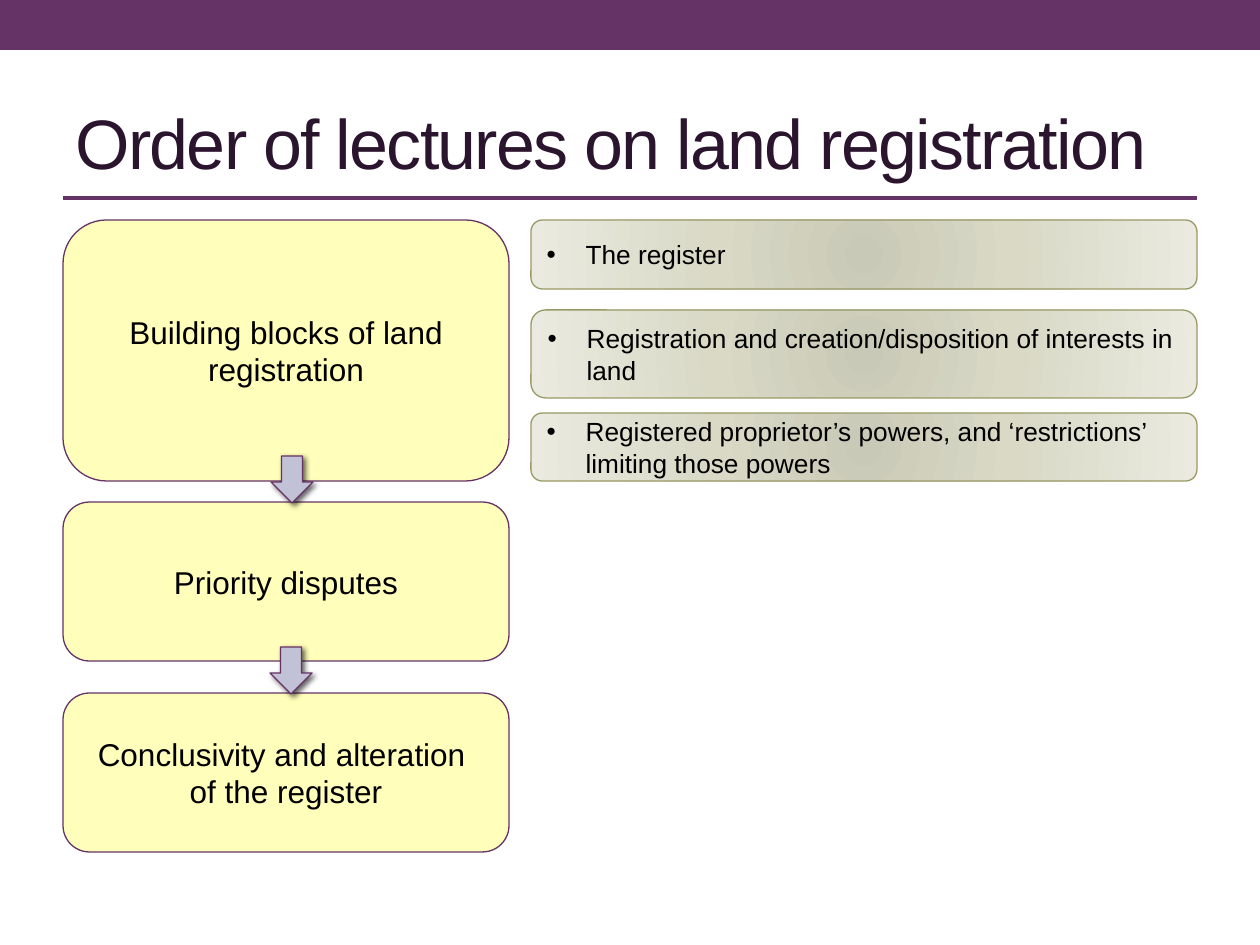
from dataclasses import dataclass

from lxml import etree
from pptx import Presentation
from pptx.dml.color import RGBColor
from pptx.enum.shapes import MSO_CONNECTOR, MSO_SHAPE as Shape
from pptx.enum.text import MSO_ANCHOR as Anchor, PP_ALIGN as Align
from pptx.oxml import parse_xml
from pptx.oxml.ns import nsdecls, qn
from pptx.util import Emu, Inches, Pt

PURPLE = RGBColor(0x66, 0x33, 0x66)
TITLE_COLOR = RGBColor(0x2B, 0x14, 0x2D)
CREAM = RGBColor(0xFF, 0xFE, 0xBA)
LAVENDER = RGBColor(0xC2, 0xC2, 0xD6)
OLIVE = RGBColor(0x99, 0x99, 0x66)
BLACK = RGBColor(0, 0, 0)
TOPIC_GRADIENT = ((0, RGBColor(0xC9, 0xC9, 0xB7)),
                  (45, RGBColor(0xD9, 0xD9, 0xC6)),
                  (100, RGBColor(0xEA, 0xEA, 0xE0)))
FONT = "Arial"
PX_PER_INCH = 126
LEFT, RIGHT = 63, 1197
STAGE_WIDTH = 446
TOPIC_LEFT = 531
BULLET_INDENT = 39


@dataclass(frozen=True)
class Box:
    top: int
    height: int
    lines: tuple[str, ...]


@dataclass(frozen=True)
class Arrow:
    left: int
    top: int


STAGES = (
    Box(220, 261, ("Building blocks of land registration",)),
    Box(502, 159, ("Priority disputes",)),
    Box(693, 159, ("Conclusivity and alteration ", "of the register")),
)
TOPICS = (
    Box(220, 69, ("The register",)),
    Box(310, 88, ("Registration and creation/disposition of interests in land",)),
    Box(413, 68, ("Registered proprietor’s powers, and ‘restrictions’ limiting those powers",)),
)
ARROWS = (Arrow(271, 456), Arrow(270, 647))


def px(value: int) -> Emu:
    return Emu(round(value * Inches(1) / PX_PER_INCH))


def add_run(paragraph, text: str, size: float, color: RGBColor):
    run = paragraph.add_run()
    run.text = text
    run.font.name = FONT
    run.font.size = Pt(size)
    run.font.color.rgb = color
    return run


def add_figure(slide, kind, left: int, top: int, width: int, height: int,
               fill: RGBColor | None, line: RGBColor | None):
    shape = slide.shapes.add_shape(kind, px(left), px(top), px(width), px(height))
    shape.shadow.inherit = False
    if fill is not None:
        shape.fill.solid()
        shape.fill.fore_color.rgb = fill
    if line is None:
        shape.line.fill.background()
    else:
        shape.line.color.rgb = line
        shape.line.width = Pt(0.75)
    return shape


def write_lines(shape, lines: tuple[str, ...], size: float, align) -> None:
    frame = shape.text_frame
    frame.word_wrap = True
    frame.vertical_anchor = Anchor.MIDDLE
    for index, text in enumerate(lines):
        paragraph = frame.add_paragraph() if index else frame.paragraphs[0]
        paragraph.alignment = align
        add_run(paragraph, text, size, BLACK)


def add_stage(slide, box: Box) -> None:
    shape = add_figure(slide, Shape.ROUNDED_RECTANGLE, LEFT, box.top,
                       STAGE_WIDTH, box.height, CREAM, PURPLE)
    write_lines(shape, box.lines, 18, Align.CENTER)


def add_topic(slide, box: Box) -> None:
    shape = add_figure(slide, Shape.ROUNDED_RECTANGLE, TOPIC_LEFT, box.top,
                       RIGHT - TOPIC_LEFT, box.height, None, OLIVE)
    # Radial gradient goes right after the geometry
    stops = "".join(f'<a:gs pos="{position * 1000}"><a:srgbClr val="{color}"/></a:gs>'
                    for position, color in TOPIC_GRADIENT)
    gradient = parse_xml(
        f'<a:gradFill {nsdecls("a")} rotWithShape="1"><a:gsLst>{stops}</a:gsLst>'
        '<a:path path="circle"><a:fillToRect l="100000" t="100000" r="100000" b="100000"/>'
        '</a:path></a:gradFill>')
    shape._element.spPr.find(qn("a:prstGeom")).addnext(gradient)
    write_lines(shape, box.lines, 15, Align.LEFT)
    # Bullets with a hanging indent
    for paragraph in shape.text_frame.paragraphs:
        properties = paragraph._p.get_or_add_pPr()
        properties.set("marL", str(px(BULLET_INDENT)))
        properties.set("indent", str(-px(BULLET_INDENT)))
        etree.SubElement(properties, qn("a:buFont")).set("typeface", FONT)
        etree.SubElement(properties, qn("a:buChar")).set("char", "•")


def add_arrow(slide, arrow: Arrow) -> None:
    shape = add_figure(slide, Shape.DOWN_ARROW, arrow.left, arrow.top, 42, 47,
                       LAVENDER, PURPLE)
    effects = shape._element.spPr.find(qn("a:effectLst"))
    effects.append(parse_xml(
        f'<a:outerShdw {nsdecls("a")} blurRad="{Pt(3)}" dist="{Pt(2)}" dir="2700000" '
        f'rotWithShape="0"><a:srgbClr val="{BLACK}"><a:alpha val="60000"/></a:srgbClr>'
        '</a:outerShdw>'))


def add_title(slide, text: str) -> None:
    title = slide.shapes.title
    title.left, title.top, title.width, title.height = (
        px(LEFT), px(73), px(RIGHT - LEFT), px(136))
    title.text_frame.word_wrap = True
    title.text_frame.vertical_anchor = Anchor.MIDDLE
    paragraph = title.text_frame.paragraphs[0]
    paragraph.alignment = Align.LEFT
    run = add_run(paragraph, text, 40, TITLE_COLOR)
    run._r.get_or_add_rPr().set("spc", "-100")


def add_rule(slide, y: int) -> None:
    rule = slide.shapes.add_connector(MSO_CONNECTOR.STRAIGHT,
                                      px(LEFT), px(y), px(RIGHT), px(y))
    rule.line.color.rgb = PURPLE
    rule.line.width = Pt(2.08)
    etree.SubElement(rule._element.spPr, qn("a:effectLst"))


def main() -> None:
    presentation = Presentation()
    presentation.slide_width = px(1260)
    presentation.slide_height = px(945)
    slide = presentation.slides.add_slide(presentation.slide_layouts[5])

    # Header
    add_figure(slide, Shape.RECTANGLE, 0, 0, 1260, 50, PURPLE, None)
    add_title(slide, "Order of lectures on land registration")
    add_rule(slide, 198)

    # Lecture stages, with the topics of the first one beside it
    for stage in STAGES:
        add_stage(slide, stage)
    for topic in TOPICS:
        add_topic(slide, topic)
    for arrow in ARROWS:
        add_arrow(slide, arrow)

    presentation.save("out.pptx")


if __name__ == "__main__":
    main()
